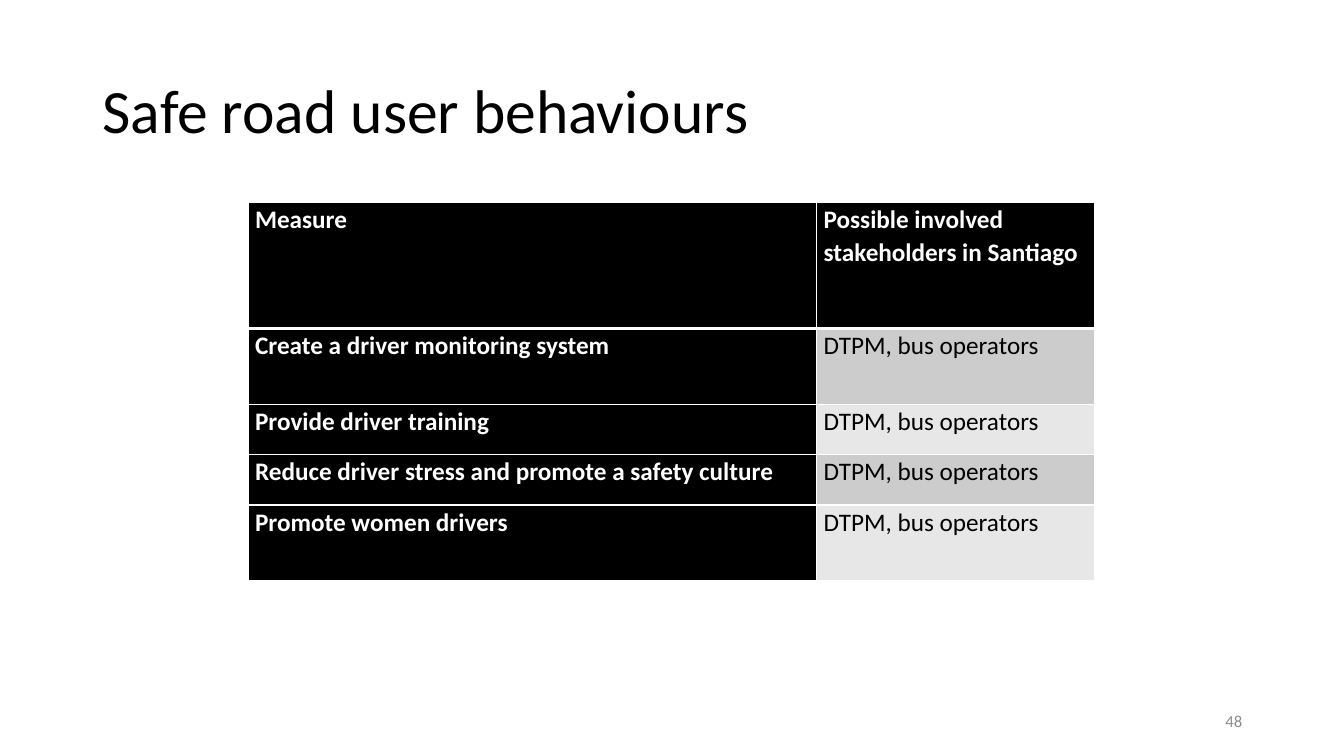
from dataclasses import dataclass

from lxml.etree import SubElement
from pptx import Presentation
from pptx.dml.color import RGBColor
from pptx.enum.text import MSO_ANCHOR as Anchor, PP_ALIGN as Align
from pptx.oxml.ns import qn
from pptx.slide import Slide
from pptx.table import _Cell as Cell
from pptx.text.text import _Paragraph as Paragraph
from pptx.util import Inches, Pt

PAGE_WIDTH, PAGE_HEIGHT = 13.33, 7.5
FONT = "Calibri"
BLACK, WHITE, GREY = "000000", "FFFFFF", "8C8C8C"
BANDS = ("CCCCCC", "E7E7E7")

TABLE_LEFT, TABLE_TOP = 2.46, 2.01
COLUMN_WIDTHS = (5.64, 2.76)
LINE_ROW = 0.25  # row heights are multiples of this
HEADER = ("Measure", "Possible involved stakeholders in Santiago")


@dataclass(frozen=True)
class Measure:
    name: str
    lines: int
    stakeholders: str = "DTPM, bus operators"


@dataclass(frozen=True)
class Label:
    text: str
    left: float
    top: float
    width: float
    height: float
    size: float
    color: str
    align: Align = Align.LEFT
    spacing: float = 1.0


MEASURES = (
    Measure("Create a driver monitoring system", 3),
    Measure("Provide driver training", 2),
    Measure("Reduce driver stress and promote a safety culture", 2),
    Measure("Promote women drivers", 3),
)
LABELS = (
    Label("Safe road user behaviours", 0.92, 0.4, 11.5, 1.45, 44, BLACK, spacing=0.9),
    Label("48", 9.42, 6.95, 3, 0.4, 12, GREY, Align.RIGHT),
)


def rgb(color: str) -> RGBColor:
    return RGBColor.from_string(color)


def add_span(para: Paragraph, text: str, size: float, color: str, bold: bool = False) -> None:
    span = para.add_run()
    span.text = text
    span.font.name = FONT
    span.font.size = Pt(size)
    span.font.bold = bold
    span.font.color.rgb = rgb(color)


def add_label(page: Slide, label: Label) -> None:
    box = page.shapes.add_textbox(
        *(Inches(length) for length in (label.left, label.top, label.width, label.height)))
    frame = box.text_frame
    frame.word_wrap = True
    frame.vertical_anchor = Anchor.MIDDLE
    para = frame.paragraphs[0]
    para.alignment = label.align
    para.line_spacing = label.spacing
    add_span(para, label.text, label.size, label.color)


def set_borders(cell: Cell, widths: dict[str, float]) -> None:
    """Draw white borders; the widths in points are keyed by side: L, R, T, B."""
    properties = cell._tc.get_or_add_tcPr()
    for index, (side, width) in enumerate(widths.items()):
        line = SubElement(properties, qn(f"a:ln{side}"), w=str(Pt(width)))
        fill = SubElement(line, qn("a:solidFill"))
        SubElement(fill, qn("a:srgbClr"), val=WHITE)
        properties.insert(index, line)


def fill_cell(cell: Cell, text: str, fill: str, strong: bool, top: float, bottom: float) -> None:
    cell.margin_left = cell.margin_right = Inches(0.07)
    cell.margin_top = cell.margin_bottom = 0
    cell.fill.solid()
    cell.fill.fore_color.rgb = rgb(fill)
    set_borders(cell, {"L": 1, "R": 1, "T": top, "B": bottom})
    para = cell.text_frame.paragraphs[0]
    para.line_spacing = 1.07
    para.space_after = Pt(8)
    add_span(para, text, 18, WHITE if strong else BLACK, strong)


def add_measures(page: Slide) -> None:
    rows = [HEADER] + [(measure.name, measure.stakeholders) for measure in MEASURES]
    heights = [LINE_ROW * lines for lines in (5, *(measure.lines for measure in MEASURES))]
    frame = page.shapes.add_table(
        len(rows), len(COLUMN_WIDTHS), Inches(TABLE_LEFT), Inches(TABLE_TOP),
        Inches(sum(COLUMN_WIDTHS)), Inches(sum(heights)))
    table = frame.table
    for column, width in zip(table.columns, COLUMN_WIDTHS):
        column.width = Inches(width)
    for r, (texts, height) in enumerate(zip(rows, heights)):
        table.rows[r].height = Inches(height)
        for c, text in enumerate(texts):
            strong = r == 0 or c == 0
            fill = BLACK if strong else BANDS[(r - 1) % len(BANDS)]
            fill_cell(table.cell(r, c), text, fill, strong,
                      top=3 if r == 1 else 1, bottom=3 if r == 0 else 1)


def main() -> None:
    deck = Presentation()
    deck.slide_width, deck.slide_height = Inches(PAGE_WIDTH), Inches(PAGE_HEIGHT)
    page = deck.slides.add_slide(deck.slide_layouts[6])
    add_measures(page)
    for label in LABELS:
        add_label(page, label)
    deck.save("out.pptx")


if __name__ == "__main__":
    main()
